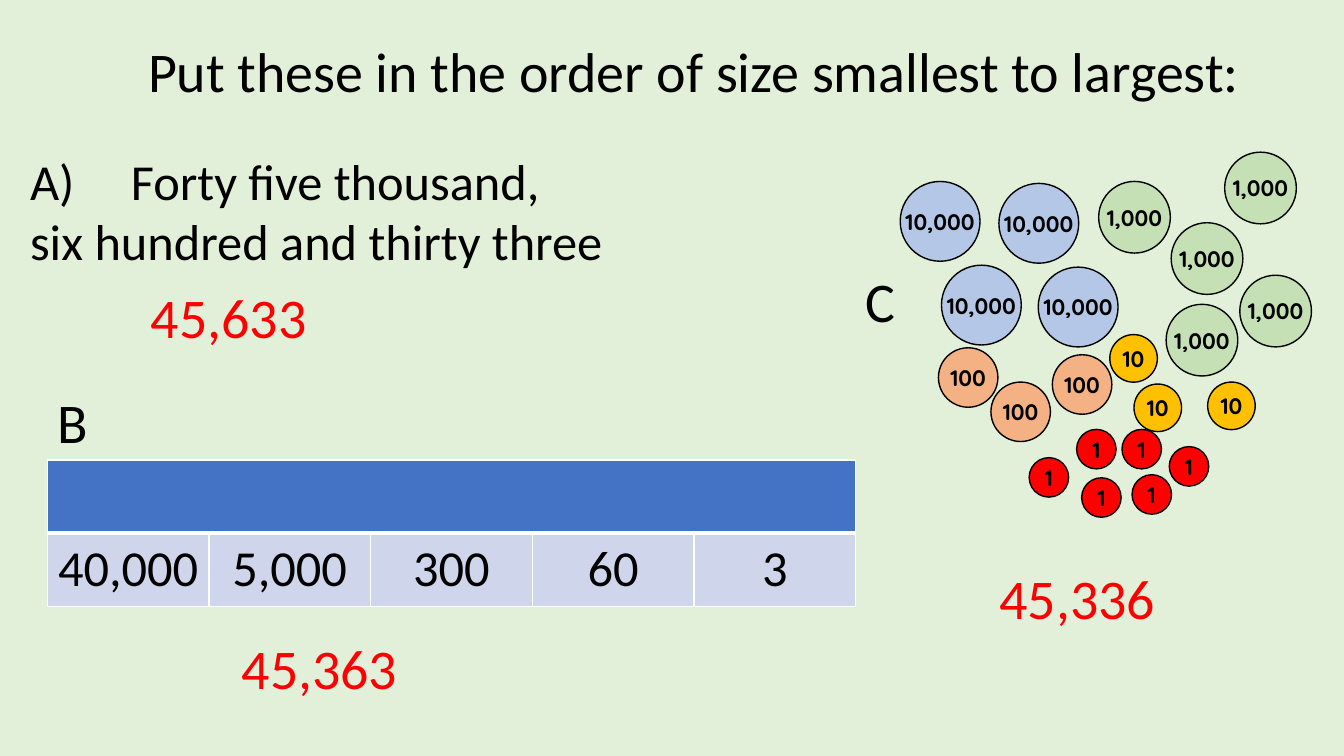
from dataclasses import dataclass

import pptx
import pptx.dml.color
import pptx.enum.shapes
import pptx.enum.text
import pptx.oxml
import pptx.oxml.ns
import pptx.slide
import pptx.table
import pptx.text.text
import pptx.util

Pt = pptx.util.Pt
RGBColor = pptx.dml.color.RGBColor
Align = pptx.enum.text.PP_ALIGN
Anchor = pptx.enum.text.MSO_ANCHOR
AutoSize = pptx.enum.text.MSO_AUTO_SIZE

BACKGROUND = RGBColor(0xE2, 0xF0, 0xD9)
BLACK = RGBColor(0x00, 0x00, 0x00)
RED = RGBColor(0xFF, 0x00, 0x00)
BLUE = RGBColor(0xB4, 0xC7, 0xE7)
GREEN = RGBColor(0xC5, 0xE0, 0xB4)
ORANGE = RGBColor(0xF4, 0xB1, 0x83)
YELLOW = RGBColor(0xFF, 0xC0, 0x00)
HEADER_FILL = RGBColor(0x44, 0x72, 0xC4)
BODY_FILL = RGBColor(0xCF, 0xD5, 0xEA)
BORDER = RGBColor(0xFF, 0xFF, 0xFF)


@dataclass(frozen=True)
class Label:
    text: str
    left: float
    top: float
    width: float
    height: float = 55.7
    size: float = 40
    color: RGBColor = BLACK


@dataclass(frozen=True)
class CounterGroup:
    value: str
    diameter: float
    fill: RGBColor
    corners: tuple[tuple[float, float], ...]


TITLE = Label("Put these in the order of size smallest to largest:", 98.6, 22.3, 801.4)

LABELS = [
    Label("A) \tForty five thousand,\nsix hundred and thirty three", 14.4, 103.7, 427, 94.5, 36),
    Label("B", 33.8, 272.9, 36.7),
    Label("C", 611.3, 186.5, 36),
    Label("45,633", 100.8, 198, 126.7, color=RED),
    Label("45,363", 165.6, 448.6, 126.7, color=RED),
    Label("45,336", 707, 398.9, 126.7, color=RED),
]

COUNTERS = [
    CounterGroup("10,000", 57, BLUE, (
        (713.5, 131), (672.5, 189.4), (741.6, 190.8), (643, 129.6))),
    CounterGroup("1,000", 51.2, GREEN, (
        (836.6, 159.1), (874.8, 108.7), (885.6, 196.6), (833, 217.4), (784.8, 129.6))),
    CounterGroup("100", 42.5, ORANGE, (
        (707.8, 272.9), (670.3, 248.4), (751.7, 253.4))),
    CounterGroup("10", 34, YELLOW, (
        (810, 274.3), (862.6, 272.9), (792.7, 239))),
    CounterGroup("1", 28.2, RED, (
        (808.6, 339.1), (769, 306.7), (735.1, 326.9),
        (835.2, 319), (772.6, 341.3), (801.4, 306.7))),
]

PARTS = ["40,000", "5,000", "300", "60", "3"]
COLUMN_WIDTH = 115.5
ROW_HEIGHT = 52.3


def write_text(frame: pptx.text.text.TextFrame, text: str, *, size: float,
               color: RGBColor = BLACK, font: str = "Calibri", bold: bool = False,
               align: Align = Align.LEFT) -> None:
    for index, line in enumerate(text.split("\n")):
        paragraph = frame.add_paragraph() if index else frame.paragraphs[0]
        paragraph.alignment = align
        run = paragraph.add_run()
        run.text = line
        run.font.name = font
        run.font.size = Pt(size)
        run.font.bold = bold
        run.font.color.rgb = color


def place_label(shape, label: Label) -> None:
    shape.left, shape.top = Pt(label.left), Pt(label.top)
    shape.width, shape.height = Pt(label.width), Pt(label.height)
    frame = shape.text_frame
    frame.word_wrap = False
    frame.auto_size = AutoSize.SHAPE_TO_FIT_TEXT
    frame.vertical_anchor = Anchor.TOP
    write_text(frame, label.text, size=label.size, color=label.color)


def draw_counters(slide: pptx.slide.Slide, group: CounterGroup) -> None:
    for left, top in group.corners:
        counter = slide.shapes.add_shape(
            pptx.enum.shapes.MSO_SHAPE.OVAL,
            Pt(left), Pt(top), Pt(group.diameter), Pt(group.diameter))
        counter.shadow.inherit = False
        counter.fill.solid()
        counter.fill.fore_color.rgb = group.fill
        counter.line.color.rgb = BLACK
        counter.line.width = Pt(1)
        frame = counter.text_frame
        frame.margin_left = frame.margin_right = frame.margin_top = frame.margin_bottom = 0
        frame.word_wrap = False
        frame.vertical_anchor = Anchor.MIDDLE
        write_text(frame, group.value, size=16, font="Quicksand", bold=True, align=Align.CENTER)


def style_cell(cell: pptx.table._Cell, fill: RGBColor, top: float, bottom: float) -> None:
    properties = cell._tc.get_or_add_tcPr()
    for side, width in {"L": 1, "R": 1, "T": top, "B": bottom}.items():
        properties.append(pptx.oxml.parse_xml(
            f'<a:ln{side} {pptx.oxml.ns.nsdecls("a")} w="{Pt(width)}"><a:solidFill>'
            f'<a:srgbClr val="{BORDER}"/></a:solidFill></a:ln{side}>'))
    cell.fill.solid()
    cell.fill.fore_color.rgb = fill


def draw_table(slide: pptx.slide.Slide) -> None:
    table = slide.shapes.add_table(
        2, len(PARTS), Pt(33.8), Pt(328.6),
        Pt(COLUMN_WIDTH * len(PARTS)), Pt(ROW_HEIGHT * 2)).table
    for row in table.rows:
        row.height = Pt(ROW_HEIGHT)
    for index, part in enumerate(PARTS):
        table.columns[index].width = Pt(COLUMN_WIDTH)
        style_cell(table.cell(0, index), HEADER_FILL, top=1, bottom=3)
        body = table.cell(1, index)
        style_cell(body, BODY_FILL, top=3, bottom=1)
        write_text(body.text_frame, part, size=36, align=Align.CENTER)
    table.cell(0, 0).merge(table.cell(0, len(PARTS) - 1))


def main() -> None:
    presentation = pptx.Presentation()
    presentation.slide_width, presentation.slide_height = Pt(960), Pt(540)
    slide = presentation.slides.add_slide(presentation.slide_layouts.get_by_name("Title Only"))
    slide.background.fill.solid()
    slide.background.fill.fore_color.rgb = BACKGROUND

    # Question and number B
    place_label(slide.shapes.title, TITLE)
    draw_table(slide)

    # Place value counters for number C
    for group in COUNTERS:
        draw_counters(slide, group)

    # Letters, number A in words, and answers
    for label in LABELS:
        place_label(slide.shapes.add_textbox(0, 0, 0, 0), label)

    presentation.save("out.pptx")


if __name__ == "__main__":
    main()
